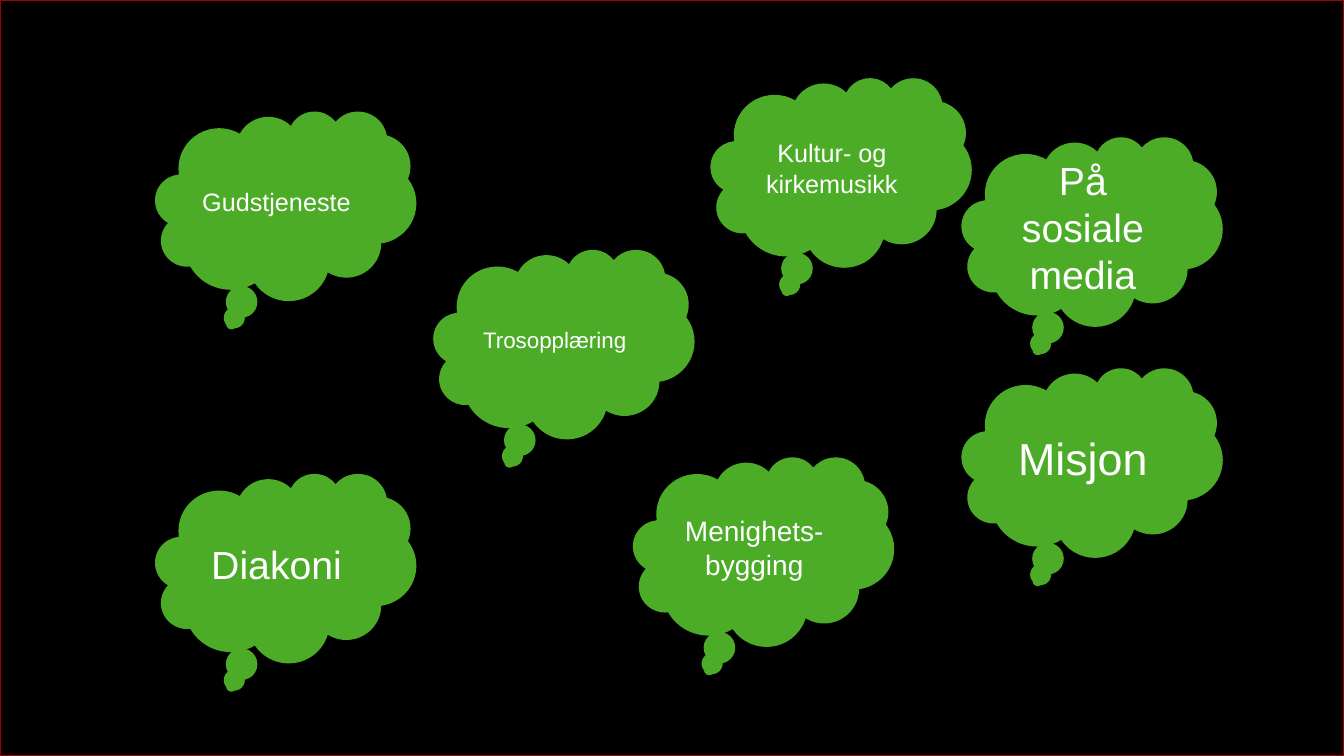
import pptx
import pptx.dml.color
import pptx.enum.shapes
import pptx.enum.text
import pptx.util

Pt = pptx.util.Pt
SHAPES = pptx.enum.shapes.MSO_SHAPE

SLIDE_WIDTH, SLIDE_HEIGHT = 960, 540
CLOUD_WIDTH, CLOUD_HEIGHT = 186.5, 135.4
LEFT_COLUMN, RIGHT_COLUMN = 110.9, 686.9

# Left, top, topic, text size
CLOUDS = [
    (LEFT_COLUMN, 79.2, "Gudstjeneste", 18),
    (309.6, 178, "Trosopplæring", 16),
    (507.6, 55.4, "Kultur- og kirkemusikk", 18),
    (452.2, 326.2, "Menighets-bygging", 20),
    (RIGHT_COLUMN, 262.6, "Misjon", 32),
    (LEFT_COLUMN, 338, "Diakoni", 28),
    (RIGHT_COLUMN, 97.6, "På sosiale media", 28),
]


def color(hex_string):
    return pptx.dml.color.RGBColor.from_string(hex_string)


def add_filled_shape(slide, kind, left, top, width, height, fill):
    shape = slide.shapes.add_shape(kind, Pt(left), Pt(top), Pt(width), Pt(height))
    shape.shadow.inherit = False
    shape.fill.solid()
    shape.fill.fore_color.rgb = color(fill)
    return shape


def add_backdrop(slide, left, top, width, height):
    backdrop = add_filled_shape(
        slide, SHAPES.RECTANGLE, left, top, width, height, "000000")
    backdrop.line.color.rgb = color("A10000")
    backdrop.line.width = Pt(1)


def add_thought_cloud(slide, left, top, width, height, topic, size):
    cloud = add_filled_shape(
        slide, SHAPES.CLOUD_CALLOUT, left, top, width, height, "4CAB27")
    cloud.line.fill.background()
    text_frame = cloud.text_frame
    text_frame.word_wrap = True
    text_frame.vertical_anchor = pptx.enum.text.MSO_ANCHOR.MIDDLE
    paragraph = text_frame.paragraphs[0]
    paragraph.text = topic
    paragraph.alignment = pptx.enum.text.PP_ALIGN.CENTER
    paragraph.font.name = "Arial"
    paragraph.font.size = Pt(size)
    paragraph.font.color.rgb = color("FFFFFF")


def main():
    presentation = pptx.Presentation()
    presentation.slide_width = Pt(SLIDE_WIDTH)
    presentation.slide_height = Pt(SLIDE_HEIGHT)
    blank_layout = presentation.slide_layouts.get_by_name("Blank")
    slide = presentation.slides.add_slide(blank_layout)

    # Black backdrop with a thin red edge
    add_backdrop(slide, 0, 0, SLIDE_WIDTH, SLIDE_HEIGHT)

    # Thought clouds, one for each topic
    for left, top, topic, size in CLOUDS:
        add_thought_cloud(slide, left, top, CLOUD_WIDTH, CLOUD_HEIGHT, topic, size)

    presentation.save("out.pptx")


if __name__ == "__main__":
    main()
